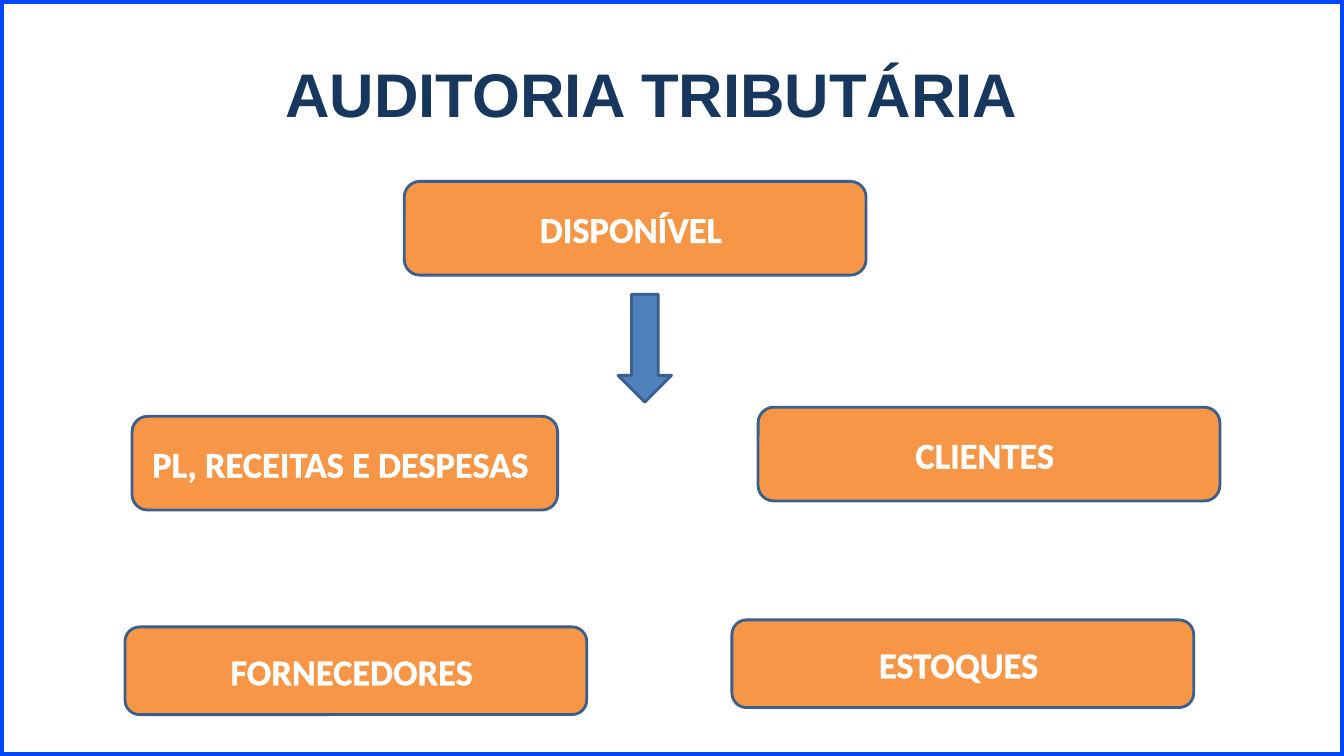
import pptx
import pptx.util
import pptx.dml.color
import pptx.enum.shapes
import pptx.enum.text
import lxml.etree

RGB = pptx.dml.color.RGBColor
KIND = pptx.enum.shapes.MSO_SHAPE
BLUE = RGB(0x00, 0x46, 0xFF)
NAVY = RGB(0x17, 0x37, 0x5E)
ORANGE = RGB(0xF7, 0x96, 0x46)
STEEL = RGB(0x4F, 0x81, 0xBD)
EDGE = RGB(0x3A, 0x5F, 0x8C)
WHITE = RGB(0xFF, 0xFF, 0xFF)

deck = pptx.Presentation()
deck.slide_width = pptx.util.Inches(13.33)
deck.slide_height = pptx.util.Inches(7.5)
slide = deck.slides.add_slide(deck.slide_layouts[6])


def place(kind, area, fill, edge, width):
    """Add a shape; area is left, top, width, height in percent of the slide."""
    sides = (deck.slide_width, deck.slide_height) * 2
    spot = [int(side * part / 100) for side, part in zip(sides, area)]
    if kind is None:
        return slide.shapes.add_textbox(*spot)
    shape = slide.shapes.add_shape(kind, *spot)
    shape.shadow.inherit = False
    if fill is None:
        shape.fill.background()
    else:
        shape.fill.solid()
        shape.fill.fore_color.rgb = fill
    shape.line.color.rgb = edge
    shape.line.width = pptx.util.Pt(width)
    return shape


def write(shape, text, form, color):
    """Put one centred line of text in the shape."""
    frame = shape.text_frame
    frame.word_wrap = True
    frame.vertical_anchor = pptx.enum.text.MSO_ANCHOR.MIDDLE
    line = frame.paragraphs[0]
    line.alignment = pptx.enum.text.PP_ALIGN.CENTER
    run = line.add_run()
    run.text = text
    for name, value in form.items():
        setattr(run.font, name, value)
    run.font.color.rgb = color
    return run


# Slide frame
place(KIND.RECTANGLE, (0, 0, 100, 100), None, BLUE, 6)

# Account boxes: text, left, top, width, height
label = {"name": "Calibri", "size": pptx.util.Pt(26), "bold": True}
wide, tall, low = 34.36, 12.4, 11.6
boxes = [
    ("DISPONÍVEL ", 30.08, 24, wide, tall),
    ("FORNECEDORES ", 9.3, 82.93, wide, low),
    ("PL, RECEITAS E DESPESAS ", 9.83, 55.07, 31.66, tall),
    ("CLIENTES ", 56.41, 53.87, wide, tall),
    ("ESTOQUES ", 54.46, 82, wide, low),
]
space = "http://schemas.openxmlformats.org/drawingml/2006/main"
for text, *area in boxes:
    box = place(KIND.ROUNDED_RECTANGLE, area, ORANGE, EDGE, 2)
    run = write(box, text, label, WHITE)
    # White outline around the letters
    rim = lxml.etree.fromstring(
        f'<a:ln xmlns:a="{space}" w="9525"><a:solidFill>'
        f'<a:srgbClr val="{WHITE}"/></a:solidFill></a:ln>')
    run.font._element.insert(0, rim)

# Arrow below the top box
place(KIND.DOWN_ARROW, (45.99, 38.93, 3.98, 14.27), STEEL, EDGE, 2)

# Title
head = {"name": "Arial", "size": pptx.util.Pt(44), "bold": True}
title = place(None, (8.1, 4, 81.92, 16.67), None, None, 0)
write(title, "AUDITORIA TRIBUTÁRIA ", head, NAVY)

deck.save("out.pptx")
